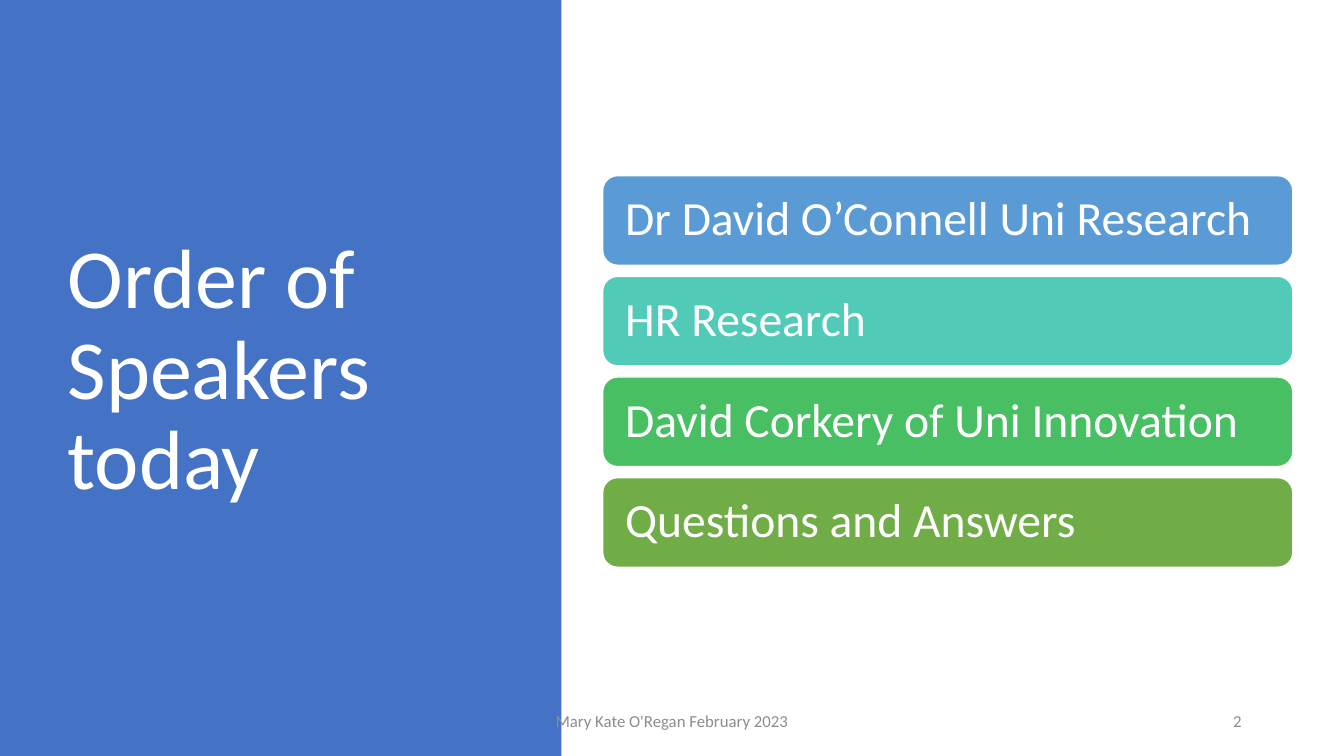
from pptx import Presentation
from pptx.dml.color import RGBColor
from pptx.enum.shapes import MSO_SHAPE
from pptx.enum.text import MSO_ANCHOR, MSO_AUTO_SIZE, PP_ALIGN
from pptx.util import Pt

RECTANGLE, ROUNDED = MSO_SHAPE.RECTANGLE, MSO_SHAPE.ROUNDED_RECTANGLE
MIDDLE = MSO_ANCHOR.MIDDLE
NO_AUTOFIT = MSO_AUTO_SIZE.NONE
LEFT, CENTER, RIGHT = PP_ALIGN.LEFT, PP_ALIGN.CENTER, PP_ALIGN.RIGHT

WHITE = RGBColor(0xFF, 0xFF, 0xFF)
GRAY = RGBColor(0x8C, 0x8C, 0x8C)
PANEL_BLUE = RGBColor(0x44, 0x72, 0xC4)
BLUE = RGBColor(0x5B, 0x9B, 0xD5)
TEAL = RGBColor(0x52, 0xCA, 0xB8)
GREEN = RGBColor(0x49, 0xBF, 0x64)
OLIVE = RGBColor(0x70, 0xAD, 0x47)

FONT = "Calibri"
TITLE_LAYOUT = 5
SPEAKERS = [
    ("Dr David O’Connell Uni Research", BLUE),
    ("HR Research", TEAL),
    ("David Corkery of Uni Innovation", GREEN),
    ("Questions and Answers", OLIVE),
]
BAR_LEFT, BAR_TOP, BAR_WIDTH, BAR_HEIGHT = 430.5, 125.5, 493, 64
BAR_PITCH = 71.9
BAR_INSET = 13


def write_text(shape, text, size, color, alignment, line_spacing=1.0):
    frame = shape.text_frame
    frame.word_wrap = True
    frame.auto_size = NO_AUTOFIT
    frame.vertical_anchor = MIDDLE
    frame.text = text
    paragraph = frame.paragraphs[0]
    paragraph.alignment = alignment
    paragraph.line_spacing = line_spacing
    paragraph.font.name = FONT
    paragraph.font.size = Pt(size)
    paragraph.font.color.rgb = color


def add_block(slide, kind, left, top, width, height, color):
    shape = slide.shapes.add_shape(kind, Pt(left), Pt(top), Pt(width), Pt(height))
    shape.shadow.inherit = False
    shape.fill.solid()
    shape.fill.fore_color.rgb = color
    shape.line.fill.background()
    return shape


def add_title(slide, text):
    title = slide.shapes.title
    title.left, title.top, title.width, title.height = Pt(41), Pt(49), Pt(299.5), Pt(433.5)
    write_text(title, text, 60, WHITE, LEFT, 0.9)
    slide.shapes._spTree.append(title._element)  # bring in front of the panel


def add_speaker_bar(slide, row, text, color):
    top = BAR_TOP + row * BAR_PITCH
    bar = add_block(slide, ROUNDED, BAR_LEFT, top, BAR_WIDTH, BAR_HEIGHT, color)
    bar.line.color.rgb = WHITE
    bar.line.width = Pt(1)
    write_text(bar, text, 34, WHITE, LEFT, 0.9)
    bar.text_frame.margin_left = bar.text_frame.margin_right = Pt(BAR_INSET)


def add_footer(slide, left, width, text, alignment):
    box = slide.shapes.add_textbox(Pt(left), Pt(500.5), Pt(width), Pt(28.75))
    write_text(box, text, 12, GRAY, alignment)


def main():
    presentation = Presentation()
    presentation.slide_width, presentation.slide_height = Pt(960), Pt(540)
    slide = presentation.slides.add_slide(presentation.slide_layouts[TITLE_LAYOUT])
    add_block(slide, RECTANGLE, 0, 0, 401, 540, PANEL_BLUE)
    add_title(slide, "Order of Speakers today")
    add_footer(slide, 318, 324, "Mary Kate O'Regan February 2023", CENTER)
    add_footer(slide, 678, 216, "2", RIGHT)
    for row, (text, color) in enumerate(SPEAKERS):
        add_speaker_bar(slide, row, text, color)
    presentation.save("out.pptx")


if __name__ == "__main__":
    main()
